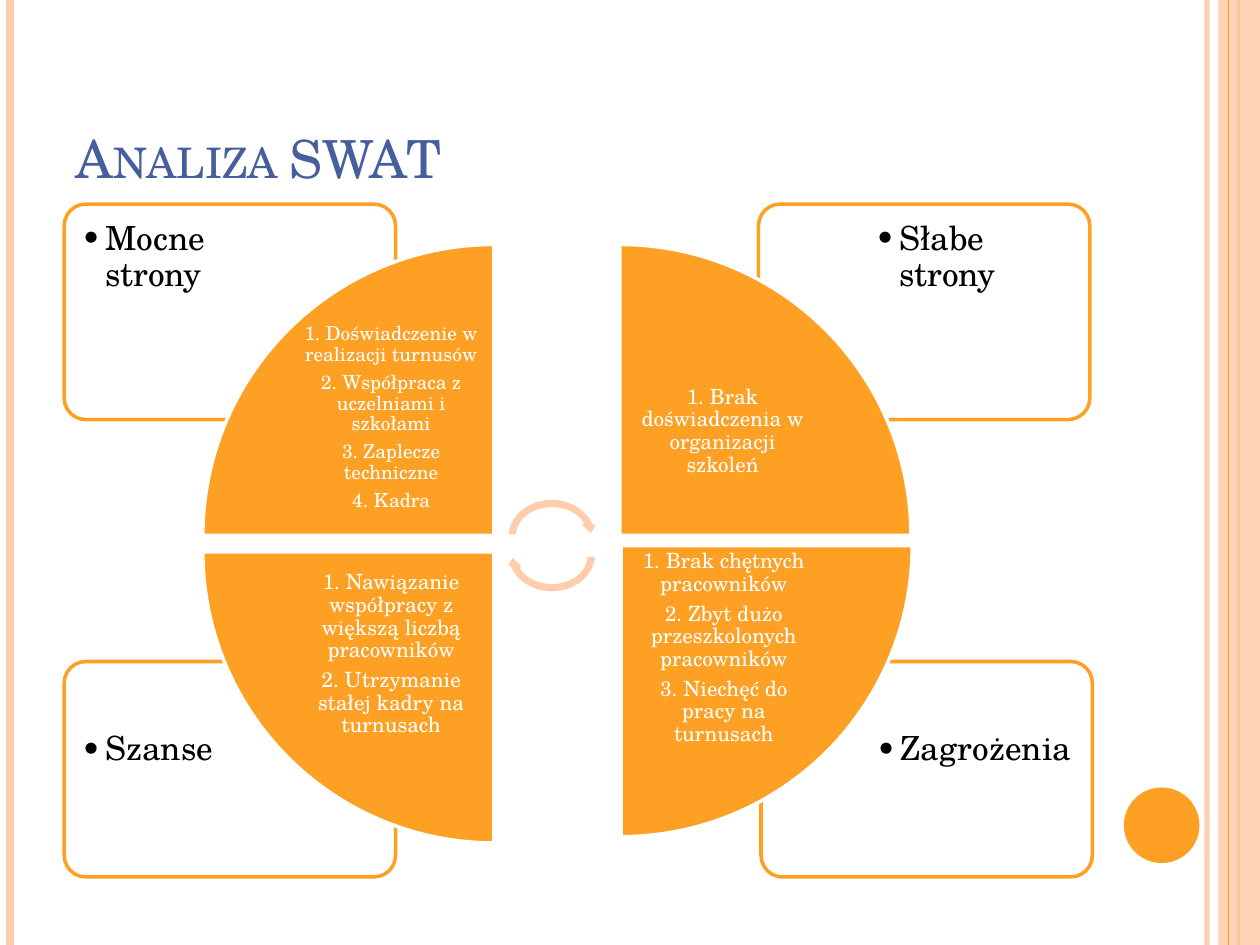
from pptx import Presentation
from pptx.dml.color import RGBColor
from pptx.enum.shapes import MSO_CONNECTOR, MSO_SHAPE
from pptx.enum.text import MSO_ANCHOR, PP_ALIGN
from pptx.oxml.ns import qn
from pptx.util import Inches, Pt
from lxml.etree import SubElement

FONT = "TeX Gyre Schola"
ORANGE = RGBColor(0xFD, 0xA0, 0x23)
PEACH = RGBColor(0xFE, 0xCD, 0xAC)
BLUE = RGBColor(0x46, 0x5E, 0x9C)
WHITE = RGBColor(0xFF, 0xFF, 0xFF)
BLACK = RGBColor(0, 0, 0)

TITLE = "Analiza SWAT"

# Corner cards: label, card left, card top, text offset right, text offset down
CARDS = [
    ("Zagrożenia", 6.04, 5.25, 0.82, 0.46),
    ("Szanse", 0.51, 5.25, 0.04, 0.46),
    ("Słabe strony", 6.02, 1.62, 0.83, 0.04),
    ("Mocne strony", 0.51, 1.62, 0.04, 0.04),
]
CARD_W, CARD_H = 2.63, 1.71

# Quarters, clockwise: left, top, text left, text top, text size, points
# The first text sits low enough to stay inside the curved edge
QUARTERS = [
    (1.61, 1.94, 2.29, 2.5, 11, [
        "1. Doświadczenie w realizacji turnusów",
        "2. Współpraca z uczelniami i szkołami",
        "3. Zaplecze techniczne",
        "4. Kadra"]),
    (4.92, 1.94, 4.92, 2.61, 12, [
        "1. Brak doświadczenia w organizacji szkoleń"]),
    (4.93, 4.33, 4.93, 4.33, 12, [
        "1. Brak chętnych pracowników",
        "2. Zbyt dużo przeszkolonych pracowników",
        "3. Niechęć do pracy na turnusach"]),
    (1.61, 4.38, 2.29, 4.38, 12, [
        "1. Nawiązanie współpracy z większą liczbą pracowników",
        "2. Utrzymanie stałej kadry na turnusach"]),
]
QUARTER, QUARTER_TEXT = 2.31, 1.63

# Vertical rules: x, colour, width, opacity; those behind and over the band
RULES_BEHIND = [(9.58, PEACH, 3, 93), (0.08, PEACH, 4.5, 100), (9.83, ORANGE, 1.5, 100)]
RULES_OVER = [(9.75, ORANGE, 0.75, 100)]

prs = Presentation()
prs.slide_width, prs.slide_height = Inches(10), Inches(7.5)
s = prs.slides.add_slide(prs.slide_layouts[6])


def set_opacity(fill, percent):
    color = fill._xPr.find(qn("a:solidFill"))[0]
    SubElement(color, qn("a:alpha")).set("val", str(percent * 1000))


def add_shape(kind, box, fill, line=None, width=2, opacity=100, rotation=0):
    sp = s.shapes.add_shape(kind, *map(Inches, box))
    sp.shadow.inherit = False
    sp.rotation = rotation
    sp.fill.solid()
    sp.fill.fore_color.rgb = fill
    if opacity < 100:
        set_opacity(sp.fill, opacity)
    if line is None:
        sp.line.fill.background()
    else:
        sp.line.color.rgb = line
        sp.line.width = Pt(width)
    return sp


def add_rule(x, color, width, opacity):
    c = s.shapes.add_connector(MSO_CONNECTOR.STRAIGHT, Inches(x), 0, Inches(x), prs.slide_height)
    c.line.color.rgb = color
    c.line.width = Pt(width)
    if opacity < 100:
        set_opacity(c.line.fill, opacity)
    SubElement(c._element.spPr, qn("a:effectLst"))


def add_text(box, lines, size, color, anchor=MSO_ANCHOR.TOP, inset=None, **para):
    tf = s.shapes.add_textbox(*map(Inches, box)).text_frame
    tf.word_wrap = True
    tf.vertical_anchor = anchor
    if inset is not None:
        for side in ("left", "top", "right", "bottom"):
            setattr(tf, f"margin_{side}", Inches(inset))
    for i, line in enumerate(lines):
        p = tf.paragraphs[0] if i == 0 else tf.add_paragraph()
        for name, value in para.items():
            setattr(p, name, value)
        r = p.add_run()
        r.text = line
        for name, value in {"name": FONT, "size": Pt(size)}.items():
            setattr(r.font, name, value)
        r.font.color.rgb = color
    return tf


# Side decoration
for rule in RULES_BEHIND:
    add_rule(*rule)
add_shape(MSO_SHAPE.RECTANGLE, (9.67, 0, 0.33, 7.5), PEACH, opacity=87)
for rule in RULES_OVER:
    add_rule(*rule)
add_shape(MSO_SHAPE.OVAL, (8.92, 6.25, 0.6, 0.6), ORANGE)

# Title in small capitals
tf = add_text((0.5, 0.3, 8.17, 1.25), [TITLE], 30, BLUE, MSO_ANCHOR.BOTTOM)
tf.paragraphs[0].runs[0].font._element.set("cap", "small")

# Corner cards with bulleted labels
for label, x, y, dx, dy in CARDS:
    card = add_shape(MSO_SHAPE.ROUNDED_RECTANGLE, (x, y, CARD_W, CARD_H), WHITE, ORANGE, opacity=90)
    card.adjustments[0] = 0.1
    tf = add_text((x + dx, y + dy, 1.77, 1.2), [label], 19, BLACK, inset=0.1, line_spacing=0.9)
    pPr = tf.paragraphs[0]._p.get_or_add_pPr()
    pPr.set("marL", str(Inches(0.19)))
    pPr.set("indent", str(-Inches(0.19)))
    SubElement(pPr, qn("a:buFont")).set("typeface", FONT)
    SubElement(pPr, qn("a:buChar")).set("char", "•")

# Quarters of the circle
for i, (x, y, text_x, text_y, size, points) in enumerate(QUARTERS):
    add_shape(MSO_SHAPE.PIE_WEDGE, (x, y, QUARTER, QUARTER), ORANGE, WHITE, rotation=90 * i)
    add_text((text_x, text_y, QUARTER_TEXT, QUARTER_TEXT), points, size, WHITE,
             MSO_ANCHOR.MIDDLE, 0.09, alignment=PP_ALIGN.CENTER,
             line_spacing=0.9, space_after=Pt(round(size / 3)))

# Cycle arrows in the centre
for y, rotation in ((3.91, 0), (4.06, 180)):
    add_shape(MSO_SHAPE.CIRCULAR_ARROW, (3.98, y, 0.8, 0.69), PEACH, WHITE, rotation=rotation)

prs.save("out.pptx")
